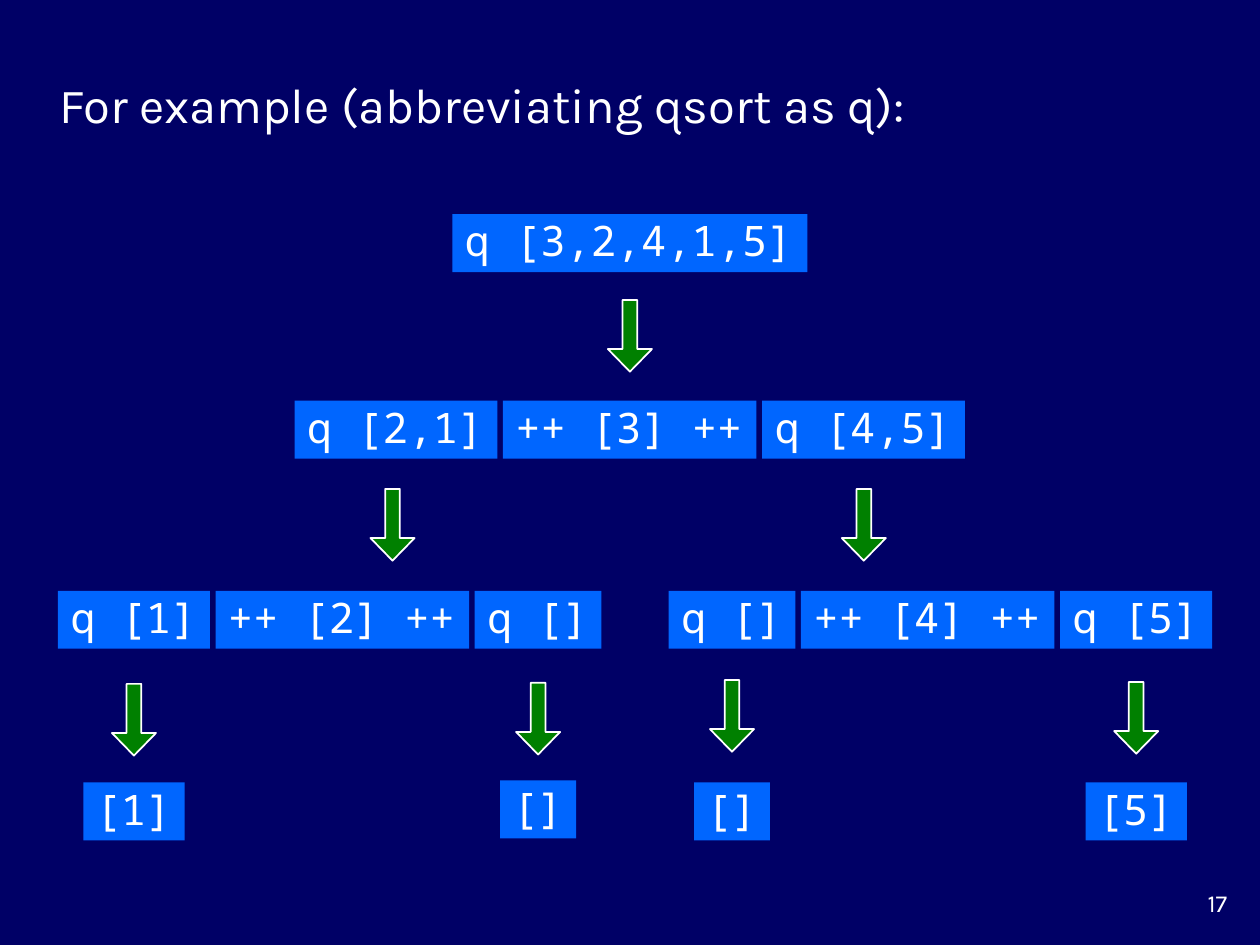
from pptx import Presentation
from pptx.dml.color import RGBColor
from pptx.enum.shapes import MSO_SHAPE
from pptx.enum.text import MSO_ANCHOR, MSO_AUTO_SIZE, PP_ALIGN
from pptx.util import Pt

NAVY = RGBColor(0x00, 0x00, 0x66)
BLUE = RGBColor(0x00, 0x66, 0xFF)
GREEN = RGBColor(0x00, 0x80, 0x00)
WHITE = RGBColor(0xFF, 0xFF, 0xFF)

TEXT_FONT = "Karla"
CODE_FONT = "Noto Sans Mono"

CHAR_WIDTH = 14.5
SIDE_INSETS = 14.4
TERM_HEIGHT = 33.1
TERM_GAP = 3.2
ARROW_WIDTH, ARROW_HEIGHT = 25.2, 41


def style_text(paragraph, font_name, size, alignment):
    paragraph.alignment = alignment
    paragraph.font.name = font_name
    paragraph.font.size = Pt(size)
    paragraph.font.color.rgb = WHITE


def term_width(code):
    return len(code) * CHAR_WIDTH + SIDE_INSETS


def add_term(slide, code, left, top):
    term = slide.shapes.add_shape(
        MSO_SHAPE.RECTANGLE, Pt(left), Pt(top), Pt(term_width(code)), Pt(TERM_HEIGHT))
    term.shadow.inherit = False
    term.fill.solid()
    term.fill.fore_color.rgb = BLUE
    term.line.fill.background()
    frame = term.text_frame
    frame.word_wrap = False
    frame.vertical_anchor = MSO_ANCHOR.MIDDLE
    frame.text = code
    frame.paragraphs[0].line_spacing = 0.9
    style_text(frame.paragraphs[0], CODE_FONT, 24, PP_ALIGN.LEFT)


def add_expression(slide, codes, left, top):
    """Place terms side by side and return the centre of each."""
    centres = []
    for code in codes:
        add_term(slide, code, left, top)
        centres.append(left + term_width(code) / 2)
        left += term_width(code) + TERM_GAP
    return centres


def add_arrow(slide, centre, top):
    arrow = slide.shapes.add_shape(
        MSO_SHAPE.DOWN_ARROW, Pt(centre - ARROW_WIDTH / 2), Pt(top),
        Pt(ARROW_WIDTH), Pt(ARROW_HEIGHT))
    arrow.adjustments[0] = 0.333
    arrow.adjustments[1] = 0.512
    arrow.shadow.inherit = False
    arrow.fill.solid()
    arrow.fill.fore_color.rgb = GREEN
    arrow.line.color.rgb = WHITE
    arrow.line.width = Pt(1)


def add_result(slide, code, centre, arrow_top, top):
    add_arrow(slide, centre, arrow_top)
    add_term(slide, code, centre - term_width(code) / 2, top)


def add_title(slide, left, top, width, height):
    title = slide.shapes.title
    title.left, title.top, title.width, title.height = map(Pt, (left, top, width, height))
    frame = title.text_frame
    frame.text = "For example (abbreviating qsort as q):"
    frame.word_wrap = True
    frame.auto_size = MSO_AUTO_SIZE.NONE
    frame.vertical_anchor = MSO_ANCHOR.MIDDLE
    style_text(frame.paragraphs[0], TEXT_FONT, 28, PP_ALIGN.LEFT)


def add_page_number(slide, left, top, width, height):
    frame = slide.shapes.add_textbox(*map(Pt, (left, top, width, height))).text_frame
    frame.word_wrap = True
    frame.text = "17"
    style_text(frame.paragraphs[0], TEXT_FONT, 14, PP_ALIGN.RIGHT)


def add_sort_tree(slide, left, top):
    """Draw the recursive calls, level by level, from the leftmost term."""
    root_centre, = add_expression(slide, ["q [3,2,4,1,5]"], left + 225.4, top)
    add_arrow(slide, root_centre, top + 49)
    add_expression(slide, ["q [2,1]", "++ [3] ++", "q [4,5]"], left + 135.2, top + 106.6)
    for arrow_centre in (191.2, 460.5):
        add_arrow(slide, left + arrow_centre, top + 157)

    smaller = add_expression(slide, ["q [1]", "++ [2] ++", "q []"], left, top + 215.2)
    larger = add_expression(slide, ["q []", "++ [4] ++", "q [5]"], left + 349, top + 215.2)
    results = [
        ("[1]", smaller[0], 268.4, 324.7),
        ("[]", smaller[2], 267.8, 323.6),
        ("[]", larger[0], 266.2, 324.7),
        ("[5]", larger[2], 267.3, 324.7),
    ]
    for code, centre, arrow_offset, offset in results:
        add_result(slide, code, centre, top + arrow_offset, top + offset)


def main():
    presentation = Presentation()
    presentation.slide_width, presentation.slide_height = Pt(720), Pt(540)
    slide = presentation.slides.add_slide(presentation.slide_layouts[5])
    slide.background.fill.solid()
    slide.background.fill.fore_color.rgb = NAVY
    add_title(slide, 26.6, 38.9, 654.5, 41)
    add_sort_tree(slide, 33.1, 122.4)
    add_page_number(slide, 660.2, 504, 48.2, 23.8)
    presentation.save("out.pptx")


if __name__ == "__main__":
    main()
